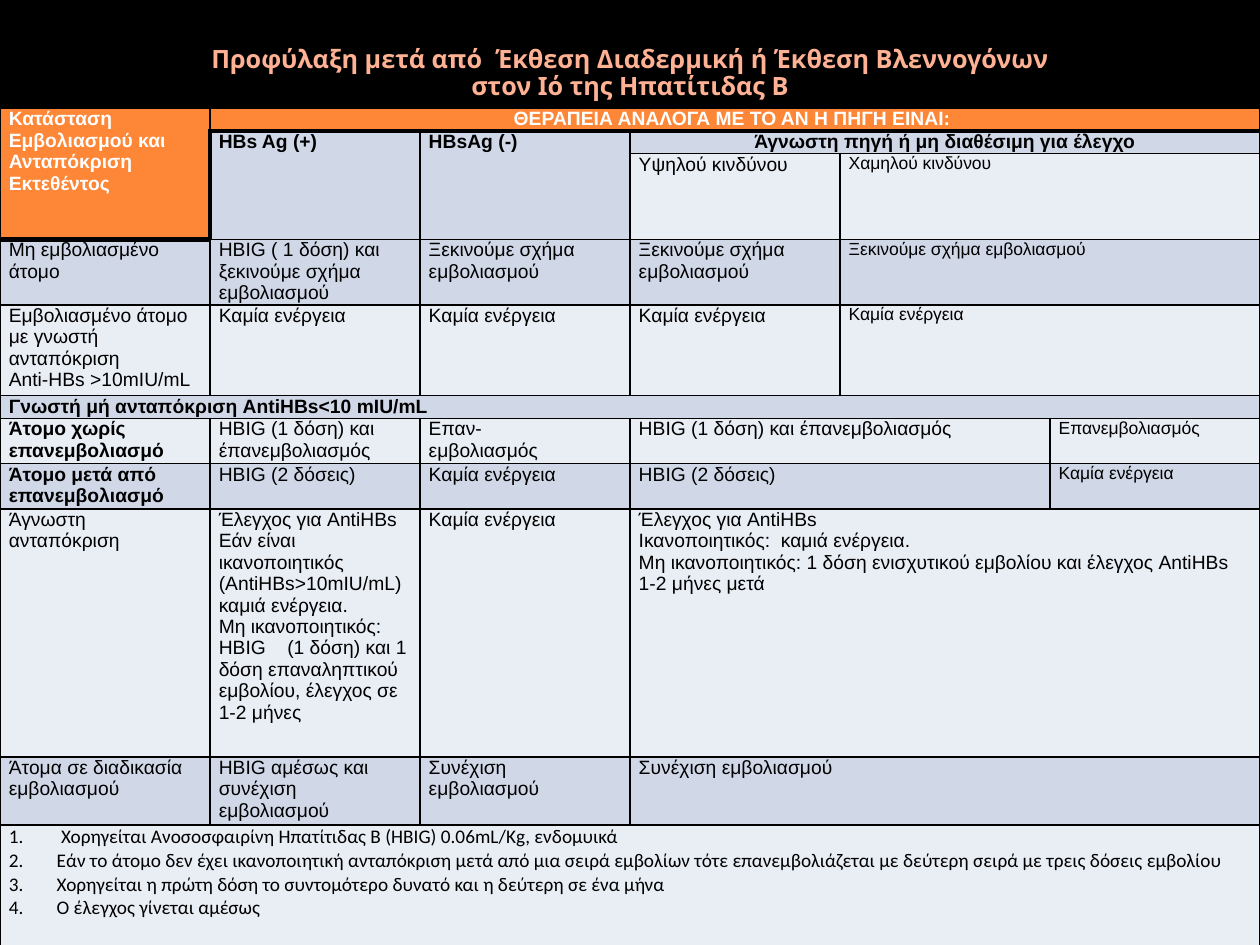
from lxml import etree
from pptx import Presentation
from pptx.dml.color import RGBColor
from pptx.enum import text
from pptx.oxml import ns
from pptx.util import Inches, Pt

BLACK, WHITE, ORANGE = "000000", "FFFFFF", "FE8637"
BANDS = ("E9EDF4", "D0D8E8")
TITLE = ("Προφύλαξη μετά από  Έκθεση Διαδερμική ή Έκθεση Βλεννογόνων\v"
         "στον Ιό της Ηπατίτιδας Β")
ROW_HEIGHTS = (0.18, 0.18, 0.68, 0.52, 0.72, 0.18, 0.36, 0.36, 1.97, 0.54, 1.09)
COLUMNS = 6
NOTES_ROW = len(ROW_HEIGHTS) - 1

# One dictionary per table row: column -> text
CONTENT = (
    {0: "Κατάσταση Εμβολιασμού και Ανταπόκριση Εκτεθέντος",
     1: "ΘΕΡΑΠΕΙΑ ΑΝΑΛΟΓΑ ΜΕ ΤΟ ΑΝ Η ΠΗΓΗ ΕΙΝΑΙ: "},
    {1: "HBs Ag (+)", 2: "HBsAg (-)", 3: "Άγνωστη πηγή ή μη διαθέσιμη για έλεγχο"},
    {3: "Υψηλού κινδύνου", 4: "Χαμηλού κινδύνου"},
    {0: "Μη εμβολιασμένο άτομο",
     1: "HBIG ( 1 δόση) και ξεκινούμε σχήμα εμβολιασμού",
     2: "Ξεκινούμε σχήμα εμβολιασμού",
     3: "Ξεκινούμε σχήμα εμβολιασμού",
     4: "Ξεκινούμε σχήμα εμβολιασμού"},
    {0: "Εμβολιασμένο άτομο με γνωστή ανταπόκριση\nAnti-HBs >10mIU/mL",
     1: "Καμία ενέργεια", 2: "Καμία ενέργεια",
     3: "Καμία ενέργεια", 4: "Καμία ενέργεια"},
    {0: "Γνωστή μή ανταπόκριση AntiHBs<10 mIU/mL"},
    {0: "Άτομο χωρίς επανεμβολιασμό",
     1: "HBIG (1 δόση) και έπανεμβολιασμός",
     2: "Επαν-\nεμβολιασμός",
     3: "HBIG (1 δόση) και έπανεμβολιασμός",
     5: "Επανεμβολιασμός"},
    {0: "Άτομο μετά από επανεμβολιασμό", 1: "HBIG (2 δόσεις)",
     2: "Καμία ενέργεια", 3: "HBIG (2 δόσεις)", 5: "Καμία ενέργεια"},
    {0: "Άγνωστη ανταπόκριση",
     1: "Έλεγχος για AntiHBs\n"
        "Εάν είναι ικανοποιητικός (AntiHBs>10mIU/mL) καμιά ενέργεια.\n"
        "Μη ικανοποιητικός: HBIG    (1 δόση) και 1 δόση επαναληπτικού εμβολίου, "
        "έλεγχος σε 1-2 μήνες",
     2: "Καμία ενέργεια",
     3: "Έλεγχος για AntiHBs\nΙκανοποιητικός:  καμιά ενέργεια.\n"
        "Μη ικανοποιητικός: 1 δόση ενισχυτικού εμβολίου και έλεγχος AntiHBs "
        "1-2 μήνες μετά"},
    {0: "Άτομα σε διαδικασία εμβολιασμού", 1: "HBIG αμέσως και συνέχιση εμβολιασμού",
     2: "Συνέχιση εμβολιασμού", 3: "Συνέχιση εμβολιασμού"},
    {0: " Χορηγείται Ανοσοσφαιρίνη Ηπατίτιδας Β (HBIG) 0.06mL/Kg, ενδομυικά\n"
        "Εάν το άτομο δεν έχει ικανοποιητική ανταπόκριση μετά από μια σειρά εμβολίων "
        "τότε επανεμβολιάζεται με δεύτερη σειρά με τρεις δόσεις εμβολίου\n"
        "Χορηγείται η πρώτη δόση το συντομότερο δυνατό και η δεύτερη σε ένα μήνα\n"
        "Ο έλεγχος γίνεται αμέσως"},
)
# First and last cell of each merged area
MERGES = (
    ((0, 0), (2, 0)), ((0, 1), (0, 5)), ((1, 1), (2, 1)), ((1, 2), (2, 2)),
    ((1, 3), (1, 5)), ((2, 4), (2, 5)), ((3, 4), (3, 5)), ((4, 4), (4, 5)),
    ((5, 0), (5, 5)), ((6, 3), (6, 4)), ((7, 3), (7, 4)), ((8, 3), (8, 5)),
    ((9, 3), (9, 5)), ((10, 0), (10, 5)),
)
CENTERED = ((0, 1), (1, 3))


def rgb(color):
    return RGBColor.from_string(color)


def format_span(span, font, size, color, bold):
    span.font.name = font
    span.font.size = Pt(size)
    span.font.bold = bold
    span.font.color.rgb = rgb(color)


def is_header(row, column):
    return row == 0 or (column == 0 and row < 3)


def border_widths(row, column):
    """Left, right, top and bottom widths; the header's edge is heavier."""
    neighbours = ((row, column - 1), (row, column + 1),
                  (row - 1, column), (row + 1, column))
    inside = is_header(row, column)
    return [3 if 0 <= r and 0 <= c < COLUMNS and is_header(r, c) != inside else 1
            for r, c in neighbours]


def add_borders(cell, widths):
    properties = cell._tc.get_or_add_tcPr()
    for index, (side, width) in enumerate(zip("LRTB", widths)):
        line = etree.Element(ns.qn(f"a:ln{side}"), w=str(Pt(width)))
        fill = etree.SubElement(line, ns.qn("a:solidFill"))
        etree.SubElement(fill, ns.qn("a:srgbClr"), val=BLACK)
        properties.insert(index, line)


def number_paragraph(para):
    properties = para._p.get_or_add_pPr()
    properties.set("marL", str(Inches(0.38)))
    properties.set("indent", str(Inches(-0.38)))
    etree.SubElement(properties, ns.qn("a:buFont"), typeface="+mj-lt")
    etree.SubElement(properties, ns.qn("a:buAutoNum"), type="arabicPeriod")


def fill_cell(cell, row, column):
    """Write the text; font, size, weight and colour follow from the place."""
    header = is_header(row, column)
    bold = row in (0, 1, 5) or (column == 0 and row in (6, 7))
    size = 10 if column >= 4 else 11
    font = "Calibri" if row == NOTES_ROW else "Arial"
    cell.text = CONTENT[row][column]
    for para in cell.text_frame.paragraphs:
        if (row, column) in CENTERED:
            para.alignment = text.PP_ALIGN.CENTER
        if row == NOTES_ROW:
            number_paragraph(para)
        for span in para.runs:
            format_span(span, font, size, WHITE if header else BLACK, bold)


def add_prophylaxis_table(page):
    frame = page.shapes.add_table(len(ROW_HEIGHTS), COLUMNS, 0, Inches(0.86),
                                  Inches(10), Inches(sum(ROW_HEIGHTS)))
    table = frame.table
    for column in table.columns:
        column.width = Inches(10 / COLUMNS)
    for row, height in zip(table.rows, ROW_HEIGHTS):
        row.height = Inches(height)
    for first, last in MERGES:
        table.cell(*first).merge(table.cell(*last))
    for row in range(len(ROW_HEIGHTS)):
        for column in range(COLUMNS):
            cell = table.cell(row, column)
            cell.margin_left = cell.margin_right = Inches(0.07)
            cell.margin_top = cell.margin_bottom = 0
            cell.fill.solid()
            cell.fill.fore_color.rgb = rgb(
                ORANGE if is_header(row, column) else BANDS[row % 2])
            add_borders(cell, border_widths(row, column))
            if column in CONTENT[row]:
                fill_cell(cell, row, column)


def set_title(page):
    title = page.shapes.title
    title.left, title.top = Inches(0.5), Inches(0.23)
    title.width, title.height = Inches(9), Inches(1.32)
    frame = title.text_frame
    frame.text = TITLE
    frame.word_wrap = True
    frame.vertical_anchor = text.MSO_ANCHOR.MIDDLE
    frame.margin_bottom = Inches(0.65)
    para = frame.paragraphs[0]
    para.alignment = text.PP_ALIGN.CENTER
    para.line_spacing = 0.88
    for span in para.runs:
        format_span(span, "Noto Sans", 14.4, "FFB194", True)


def main():
    deck = Presentation()
    deck.slide_width, deck.slide_height = Inches(10), Inches(7.5)
    page = deck.slides.add_slide(deck.slide_layouts[5])
    page.background.fill.solid()
    page.background.fill.fore_color.rgb = rgb(BLACK)
    set_title(page)
    add_prophylaxis_table(page)
    deck.save("out.pptx")


if __name__ == "__main__":
    main()
